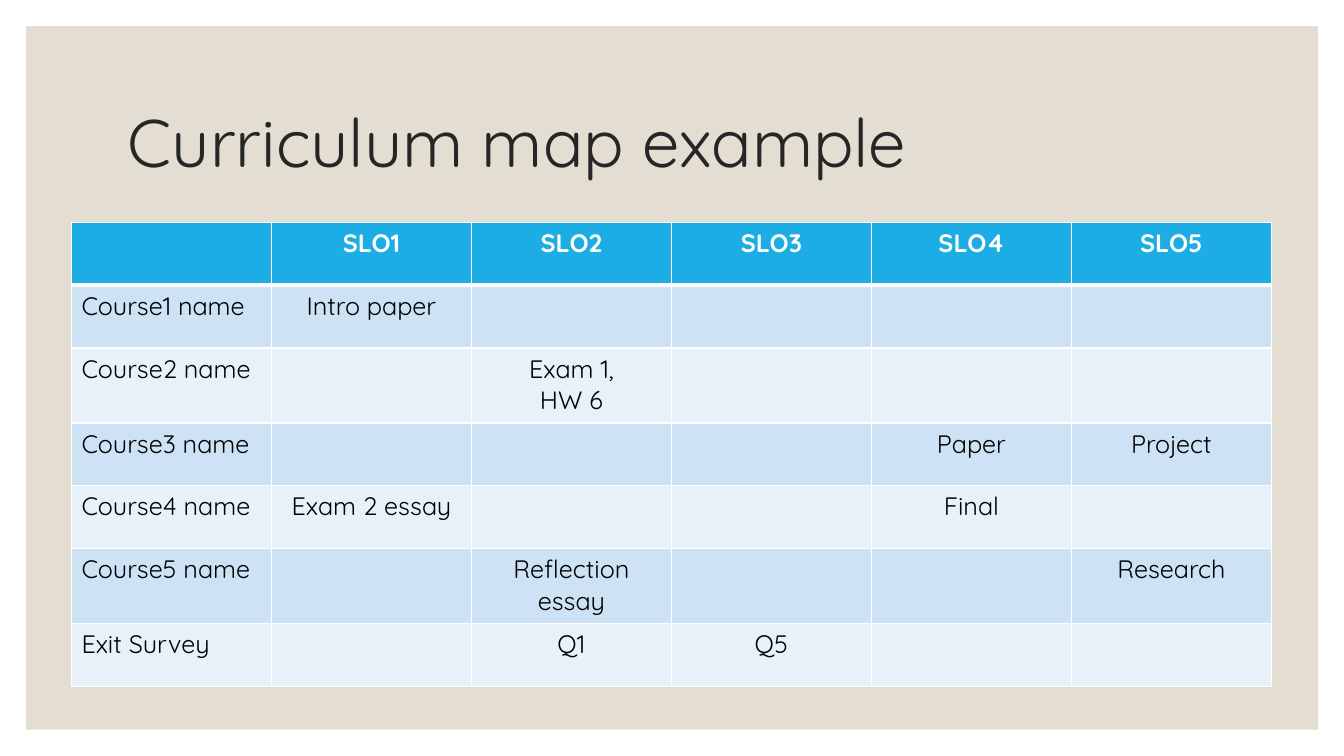
"""Build the curriculum map slide: a title over a table of courses and outcomes."""
import dataclasses

import lxml.etree
import pptx
import pptx.dml.color
import pptx.enum.shapes
import pptx.enum.text
import pptx.oxml.ns
import pptx.presentation
import pptx.shapes.autoshape
import pptx.slide
import pptx.table
import pptx.text.text
import pptx.util

Cm = pptx.util.Cm
Align = pptx.enum.text.PP_ALIGN


@dataclasses.dataclass(frozen=True)
class Theme:
    font: str = "Quicksand"
    title_size: int = 48
    table_size: int = 18
    title_ink: str = "262626"
    header_ink: str = "FFFFFF"
    body_ink: str = "000000"
    panel: str = "E3DED1"
    header_fill: str = "1CADE4"
    band_fills: tuple[str, str] = ("CDE3F5", "E8F1FA")
    border: str = "FFFFFF"
    thin: int = 1
    thick: int = 3


@dataclasses.dataclass(frozen=True)
class Course:
    name: str
    evidence: dict[int, str]
    tall: bool = False


THEME = Theme()
OUTCOMES = 5
COLUMN_WIDTH = 5.04
ROW_HEIGHT = 1.58
TALL_ROW_HEIGHT = 1.89
COURSES = [
    Course("Course1 name", {1: "Intro paper"}),
    Course("Course2 name", {2: "Exam 1,\nHW 6"}, tall=True),
    Course("Course3 name", {4: "Paper", 5: "Project"}),
    Course("Course4 name", {1: "Exam 2 essay", 4: "Final"}),
    Course("Course5 name", {2: "Reflection essay", 5: "Research"}, tall=True),
    Course("Exit Survey", {2: "Q1", 3: "Q5"}),
]


def color(value: str) -> pptx.dml.color.RGBColor:
    return pptx.dml.color.RGBColor.from_string(value)


def add_span(para: pptx.text.text._Paragraph, text: str, size: int, ink: str, bold: bool = False) -> None:
    span = para.add_run()
    span.text = text
    span.font.name = THEME.font
    span.font.size = pptx.util.Pt(size)
    span.font.bold = bold
    span.font.color.rgb = color(ink)


def add_title(page: pptx.slide.Slide, text: str) -> None:
    title = page.shapes.title
    title.left, title.top, title.width, title.height = Cm(2.97), Cm(1.78), Cm(27.94), Cm(3.81)
    frame = title.text_frame
    frame.word_wrap = True
    frame.auto_size = pptx.enum.text.MSO_AUTO_SIZE.NONE
    frame.vertical_anchor = pptx.enum.text.MSO_ANCHOR.MIDDLE
    para = frame.paragraphs[0]
    para.alignment = Align.LEFT
    para.line_spacing = 0.9
    add_span(para, text, THEME.title_size, THEME.title_ink)


def add_panel(page: pptx.slide.Slide) -> None:
    panel = page.shapes.add_shape(
        pptx.enum.shapes.MSO_SHAPE.RECTANGLE, Cm(0.66), Cm(0.66), Cm(32.56), Cm(17.73)
    )
    panel.shadow.inherit = False
    panel.fill.solid()
    panel.fill.fore_color.rgb = color(THEME.panel)
    panel.line.fill.background()
    page.shapes.title.element.addprevious(panel.element)


def add_borders(cell: pptx.table._Cell, row: int) -> None:
    qn = pptx.oxml.ns.qn
    properties = cell._tc.get_or_add_tcPr()
    widths = {
        "L": THEME.thin,
        "R": THEME.thin,
        "T": THEME.thick if row == 1 else THEME.thin,
        "B": THEME.thick if row == 0 else THEME.thin,
    }
    for side, width in widths.items():
        line = lxml.etree.SubElement(properties, qn(f"a:ln{side}"), w=str(pptx.util.Pt(width)))
        fill = lxml.etree.SubElement(line, qn("a:solidFill"))
        lxml.etree.SubElement(fill, qn("a:srgbClr"), val=THEME.border)


def format_cell(cell: pptx.table._Cell, text: str, row: int, column: int) -> None:
    header = row == 0
    add_borders(cell, row)
    cell.fill.solid()
    cell.fill.fore_color.rgb = color(THEME.header_fill if header else THEME.band_fills[(row - 1) % 2])
    for index, line in enumerate(text.split("\n")):
        para = cell.text_frame.add_paragraph() if index else cell.text_frame.paragraphs[0]
        para.alignment = Align.CENTER if column else Align.LEFT
        if line:
            add_span(para, line, THEME.table_size, THEME.header_ink if header else THEME.body_ink, header)


def add_map(page: pptx.slide.Slide) -> None:
    outcomes = range(1, OUTCOMES + 1)
    rows = [["", *(f"SLO{number}" for number in outcomes)]]
    rows += [[course.name, *(course.evidence.get(number, "") for number in outcomes)] for course in COURSES]
    heights = [ROW_HEIGHT] + [TALL_ROW_HEIGHT if course.tall else ROW_HEIGHT for course in COURSES]
    table = page.shapes.add_table(
        len(rows), OUTCOMES + 1, Cm(1.8), Cm(5.61), Cm(COLUMN_WIDTH * (OUTCOMES + 1)), Cm(sum(heights))
    ).table
    for column in table.columns:
        column.width = Cm(COLUMN_WIDTH)
    for row, (texts, height) in enumerate(zip(rows, heights)):
        table.rows[row].height = Cm(height)
        for column, text in enumerate(texts):
            format_cell(table.cell(row, column), text, row, column)


def main() -> None:
    deck = pptx.Presentation()
    deck.slide_width, deck.slide_height = Cm(33.87), Cm(19.05)
    page = deck.slides.add_slide(deck.slide_layouts.get_by_name("Title Only"))
    add_title(page, "Curriculum map example")
    add_panel(page)
    add_map(page)
    deck.save("out.pptx")


if __name__ == "__main__":
    main()
